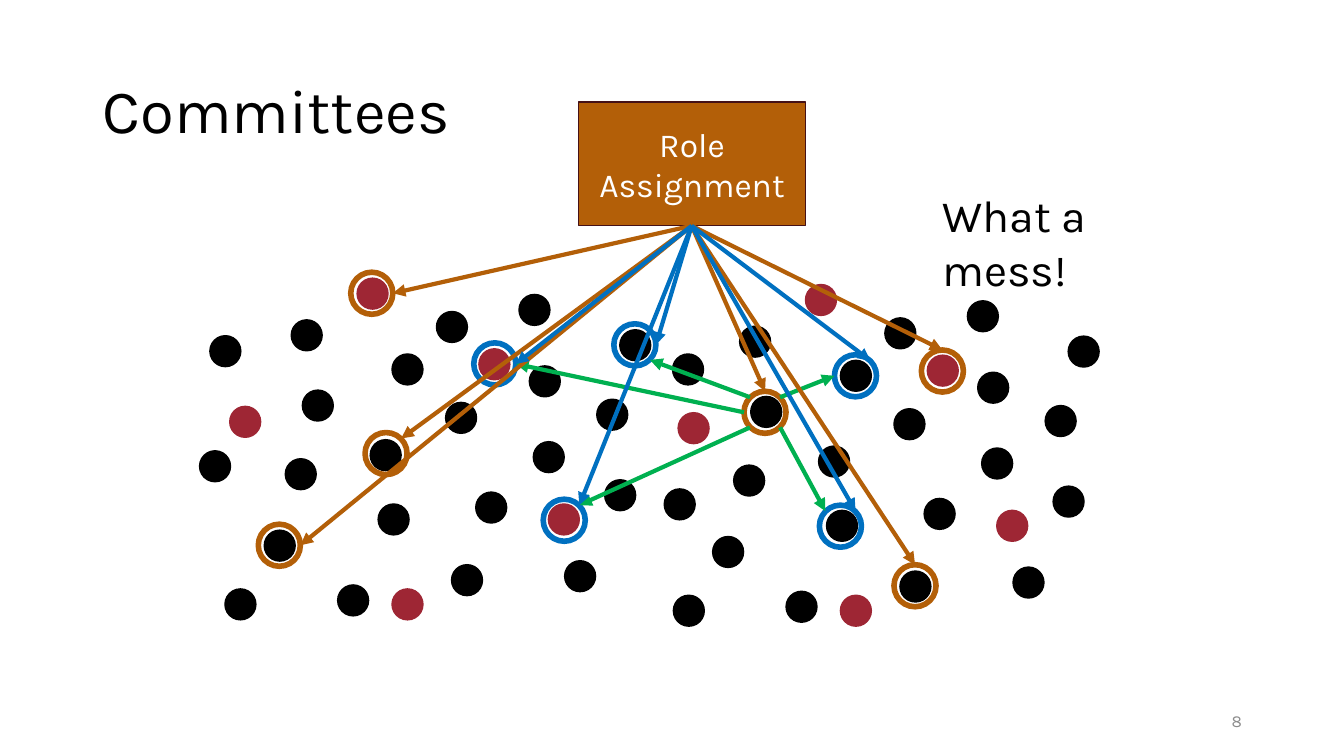
"""Build the Committees slide: role assignment over a crowd of parties."""
from lxml import etree
from pptx import Presentation
from pptx.dml.color import RGBColor
from pptx.enum.shapes import MSO_CONNECTOR, MSO_SHAPE
from pptx.enum.text import MSO_ANCHOR, PP_ALIGN
from pptx.oxml.ns import qn
from pptx.util import Cm, Pt

BLACK = RGBColor(0x00, 0x00, 0x00)
WHITE = RGBColor(0xFF, 0xFF, 0xFF)
GRAY = RGBColor(0x8C, 0x8C, 0x8C)
RED = RGBColor(0x9E, 0x26, 0x34)
ORANGE = RGBColor(0xB3, 0x5F, 0x08)
BLUE = RGBColor(0x00, 0x70, 0xC0)
GREEN = RGBColor(0x00, 0xB0, 0x50)
MAROON = RGBColor(0x45, 0x11, 0x17)

DOT = 0.39
RING = 0.53
DIAG = 0.38
SHIFT = (11.3, 0.16)
SITES = {
    "top": (0, -RING), "left": (-RING, 0), "right": (RING, 0),
    "top left": (-DIAG, -DIAG), "top right": (DIAG, -DIAG),
    "low left": (-DIAG, DIAG), "low right": (DIAG, DIAG),
}


def circle(parent, center, radius, fill, line, width):
    x, y = center
    shape = parent.shapes.add_shape(
        MSO_SHAPE.OVAL, Cm(x - radius), Cm(y - radius), Cm(2 * radius), Cm(2 * radius))
    shape.shadow.inherit = False
    if fill is None:
        shape.fill.background()
    else:
        shape.fill.solid()
        shape.fill.fore_color.rgb = fill
    shape.line.color.rgb = line
    shape.line.width = Pt(width)


def arrow(parent, start, ring, site, color):
    x, y = (a + b for a, b in zip(ring, SITES[site]))
    link = parent.shapes.add_connector(
        MSO_CONNECTOR.STRAIGHT, Cm(start[0]), Cm(start[1]), Cm(x), Cm(y))
    link.line.color.rgb = color
    link.line.width = Pt(3)
    etree.SubElement(link.line._get_or_add_ln(), qn("a:tailEnd"), type="triangle")
    etree.SubElement(link._element.spPr, qn("a:effectLst"))


deck = Presentation()
deck.slide_width = Cm(33.87)
deck.slide_height = Cm(19.05)
slide = deck.slides.add_slide(deck.slide_layouts[6])

honest = [
    (7.73, 8.45), (10.27, 9.31), (8.01, 10.22), (7.05, 13.75), (7.58, 11.95),
    (8.9, 15.13), (9.72, 11.47), (6.06, 15.23), (9.92, 13.09), (11.39, 8.24),
    (11.62, 10.53), (13.47, 7.81), (16.01, 8.7), (13.73, 9.61), (12.38, 12.79),
    (13.83, 11.52), (14.62, 14.52), (15.43, 10.45), (11.77, 14.62), (15.63, 12.48),
]
corrupt = [(6.18, 10.63), (10.27, 15.23), (12.46, 9.18), (9.39, 7.4), (14.21, 13.09)]
extra = [(5.68, 8.85), (5.42, 11.75), (17.34, 9.31), (17.13, 12.71)]

for center in extra:
    circle(slide, center, DOT, BLACK, BLACK, 1)
for dx, dy in ((0, 0), SHIFT):
    for dots, color in ((honest, BLACK), (corrupt, RED)):
        for x, y in dots:
            circle(slide, (x + dx, y + dy), DOT, color, color, 1)

hub = (19.28, 10.39)
first = [
    ((9.37, 7.39), "right"), ((9.73, 11.43), "top right"), ((7.04, 13.74), "right"),
    (hub, "top"), ((23.06, 14.76), "top"), ((23.75, 9.35), "top"),
]
second = [
    ((21.56, 9.47), "top right"), ((21.18, 13.26), "top right"),
    ((14.22, 13.11), "top right"), ((16, 8.69), "right"), ((12.47, 9.17), "right"),
]
teams = ((first, ORANGE), (second, BLUE))

for team, color in teams:
    group = slide.shapes.add_group_shape()
    for ring, site in team:
        circle(group, ring, RING, None, color, 4)

ends = ["left", "top left", "top right", "low right", "right"]
exits = ["top right", "low right", "low left", "top left", "left"]
for (ring, _), site, out in zip(second, ends, exits):
    start = [a + b for a, b in zip(hub, SITES[out])]
    arrow(group, start, ring, site, GREEN)

role = slide.shapes.add_shape(
    MSO_SHAPE.RECTANGLE, Cm(14.58), Cm(2.57), Cm(5.72), Cm(3.12))
role.shadow.inherit = False
role.fill.solid()
role.fill.fore_color.rgb = ORANGE
role.line.color.rgb = MAROON
role.line.width = Pt(1)

for team, color in teams:
    group = slide.shapes.add_group_shape()
    for ring, site in team:
        arrow(group, (17.43, 5.69), ring, site, color)

title = slide.shapes.add_textbox(Cm(2.34), Cm(1.02), Cm(29.21), Cm(3.68))
page = slide.shapes.add_textbox(Cm(23.93), Cm(17.65), Cm(7.62), Cm(1.02))
mess = slide.shapes.add_textbox(Cm(23.5), Cm(4.6), Cm(7.06), Cm(1.63))

labels = [
    (role, "Role\nAssignment", 24, WHITE, PP_ALIGN.CENTER, MSO_ANCHOR.MIDDLE),
    (title, "Committees", 44, BLACK, PP_ALIGN.LEFT, MSO_ANCHOR.MIDDLE),
    (page, "8", 12, GRAY, PP_ALIGN.RIGHT, MSO_ANCHOR.MIDDLE),
    (mess, "What a mess!", 32, BLACK, PP_ALIGN.LEFT, MSO_ANCHOR.TOP),
]
for shape, text, size, color, align, anchor in labels:
    frame = shape.text_frame
    frame.text = text
    frame.word_wrap = True
    frame.vertical_anchor = anchor
    for para in frame.paragraphs:
        para.alignment = align
        for run in para.runs:
            run.font.name = "Karla"
            run.font.size = Pt(size)
            run.font.color.rgb = color
title.text_frame.paragraphs[0].line_spacing = 0.9

deck.save("out.pptx")
